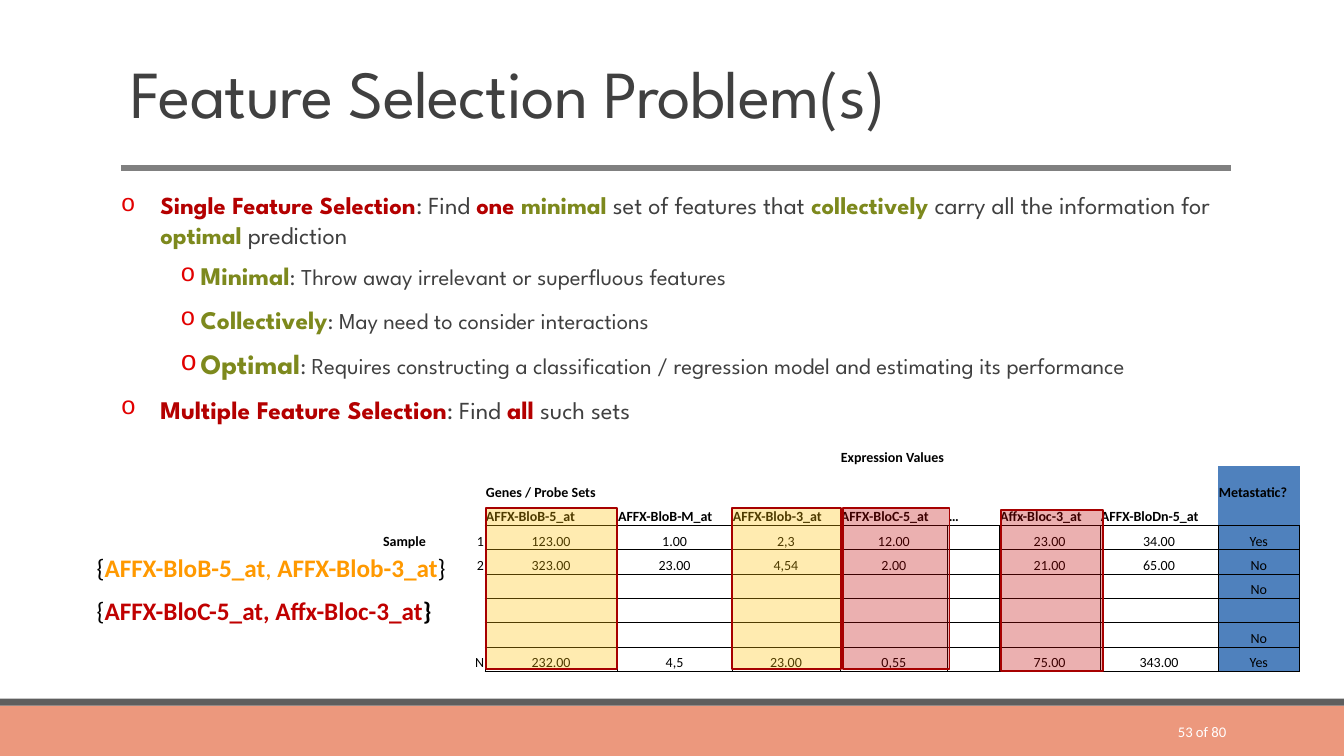
"""Build the feature selection slide with its expression table."""
from lxml import etree
from pptx import Presentation, util as u
from pptx.dml.color import RGBColor
from pptx.enum import shapes, text
from pptx.oxml.ns import qn

deck = Presentation()
deck.slide_width, deck.slide_height = u.Inches(13.33), u.Inches(7.5)
slide = deck.slides.add_slide(deck.slide_layouts[6])
items = slide.shapes
BOX = shapes.MSO_SHAPE.RECTANGLE
ALIGN, ANCHOR = text.PP_ALIGN, text.MSO_ANCHOR
LEFT, MID, RIGHT = ALIGN.LEFT, ALIGN.CENTER, ALIGN.RIGHT
HEAD, BASE = "League Spartan", "Calibri"
RED, GREEN, GREY, BLACK = "B40000", "7D891D", "404040", "000000"
GOLD, WINE, BLUE = "FF9900", "C00000", "4F81BD"


def place(*shares):
    """Turn percent shares of the slide into lengths, across and down in turn."""
    sides = (deck.slide_width, deck.slide_height) * 2
    return [round(side * share / 100) for side, share in zip(sides, shares)]


def paint(fill, code):
    """Fill an area, a line or a font with one colour."""
    fill.solid()
    fill.fore_color.rgb = RGBColor.from_string(code)


for area, code in (((0, 93.33, 100, 6.67), "EC987D"), ((0, 92.4, 100, 0.93), "5E5E5E")):
    band = items.add_shape(BOX, *place(*area))
    band.shadow.inherit = False
    paint(band.fill, code)
    band.line.fill.background()

rule = items.add_connector(shapes.MSO_CONNECTOR.STRAIGHT, *place(9, 22.27, 91.6, 22.27))
paint(rule.line.fill, "808080")
rule.line.width = u.Pt(4.25)
etree.SubElement(rule._element.spPr, qn("a:effectLst"))

lines = []
notes = [
    ((9, 4.13, 82.5, 17.6), ANCHOR.MIDDLE, LEFT, HEAD,
     [("Feature Selection Problem(s)", 48, GREY, False)]),
    ((6.45, 72.4, 28.5, 5.33), ANCHOR.TOP, LEFT, BASE,
     [("{", 18, BLACK, False), ("AFFX-BloB-5_at", 18, GOLD, True), (",", 18, GOLD, False),
      (" AFFX-Blob-3_at", 18, GOLD, True), ("}", 18, BLACK, False)]),
    ((6.45, 78.13, 27.76, 5.33), ANCHOR.TOP, LEFT, BASE,
     [("{", 18, BLACK, False), ("AFFX-BloC-5_at, Affx-Bloc-3_at", 18, WINE, True),
      ("}", 18, BLACK, True)]),
    ((81.25, 94.13, 10.73, 5.33), ANCHOR.MIDDLE, RIGHT, BASE,
     [("53 of 80", 10.5, "FFFFFF", False)]),
]
for area, anchor, align, face, runs in notes:
    frame = items.add_textbox(*place(*area)).text_frame
    frame.word_wrap = True
    frame.vertical_anchor = anchor
    par = frame.paragraphs[0]
    par.alignment = align
    par.line_spacing = 0.85 if face == HEAD else 1.0
    lines.append((par, face, runs))

points = [
    (0, 1.0, 17.5, 17.5, [
        ("Single Feature Selection", RED), (": Find ", GREY), ("one ", RED), ("minimal", GREEN),
        (" set of features that ", GREY), ("collectively", GREEN),
        (" carry all the information for ", GREY), ("optimal", GREEN), (" prediction", GREY)]),
    (1, 0.7, 18.1, 16.2, [
        ("Minimal", GREEN), (": Throw away irrelevant or superfluous features", GREY)]),
    (1, 0.7, 18.1, 16.2, [
        ("Collectively", GREEN), (": May need to consider interactions", GREY)]),
    (1, 0.7, 20, 16.2, [
        ("Optimal", GREEN),
        (": Requires constructing a classification / regression model"
         " and estimating its performance", GREY)]),
    (0, 0.7, 18.1, 17.5, [
        ("Multiple Feature Selection", RED), (": Find ", GREY), ("all", RED),
        (" such sets", GREY)]),
]
body = items.add_textbox(*place(9, 24.53, 82.5, 36.4)).text_frame
body.word_wrap = True
body.margin_left = body.margin_right = 0
for row, (level, space, strong, plain, parts) in enumerate(points):
    par = body.add_paragraph() if row else body.paragraphs[0]
    par.level = level
    props = par._p.get_or_add_pPr()
    props.set("marL", str(u.Inches((0.39, 0.79)[level])))
    props.set("indent", str(u.Inches((-0.39, -0.2)[level])))
    tint = etree.SubElement(props, qn("a:buClr"))
    etree.SubElement(tint, qn("a:srgbClr"), val="E20000")
    etree.SubElement(props, qn("a:buFont"), typeface="Courier New")
    etree.SubElement(props, qn("a:buChar"), char="o")
    par.line_spacing = space
    par.space_before, par.space_after = u.Pt(12), u.Pt((2, 4)[level])
    lines.append((par, HEAD, [(words, plain if code == GREY else strong, code, code != GREY)
                              for words, code in parts]))

for par, face, runs in lines:
    par.font.name = face
    for words, size, code, bold in runs:
        run = par.add_run()
        run.text = words
        run.font.name, run.font.size, run.font.bold = face, u.Pt(size), bold
        paint(run.font.fill, code)
        if size == 48:
            run.font._element.set("spc", "-50")

wide = [3.83, 3.83, 9.83, 8.55, 8.03, 8.03, 3.83, 7.5, 8.78, 6.08]
tall = [3.22, 4.67] + [3.22] * 7
data = [
    ["", "", "Expression Values"],
    ["", "", "Genes / Probe Sets"] + [""] * 6 + ["Metastatic?"],
    ["", "", "AFFX-BloB-5_at", "AFFX-BloB-M_at", "AFFX-Blob-3_at", "AFFX-BloC-5_at", "…",
     "Affx-Bloc-3_at", "AFFX-BloDn-5_at", ""],
    ["Sample", "1", "123.00", "1.00", "2,3", "12.00", "", "23.00", "34.00", "Yes"],
    ["", "2", "323.00", "23.00", "4,54", "2.00", "", "21.00", "65.00", "No"],
    [""] * 9 + ["No"],
    [""] * 10,
    [""] * 9 + ["No"],
    ["", "N", "232.00", "4,5", "23.00", "0,55", "", "75.00", "343.00", "Yes"],
]
grid = items.add_table(len(tall), len(wide), *place(28.43, 58.4, sum(wide), sum(tall))).table
grid.first_row = grid.horz_banding = False
for col, share in zip(grid.columns, wide):
    col.width = place(share)[0]
for row, share in zip(grid.rows, tall):
    row.height = place(0, share)[1]
grid.cell(0, 2).merge(grid.cell(0, 9))
for r, row in enumerate(data):
    for c in range(len(wide)):
        words = row[c] if c < len(row) else ""
        cell = grid.cell(r, c)
        inner = r > 2 and c > 1
        cell.margin_left = cell.margin_right = cell.margin_top = u.Inches(0.01)
        cell.margin_bottom = 0
        cell.vertical_anchor = ANCHOR.BOTTOM
        par = cell.text_frame.paragraphs[0]
        par.alignment = MID if inner or r == 0 else RIGHT if c == 1 else LEFT
        par.font.name, par.font.size = BASE, u.Pt(10)
        par.font.bold = r < 3 or c == 0
        paint(par.font.fill, BLACK)
        if words:
            par.add_run().text = words
        else:
            par._p.get_or_add_endParaRPr().set("sz", "1000")
        drawn = "LRTB" if inner else "B" if r == 2 and c > 1 else "R" if r > 2 and c == 1 else ""
        props = cell._tc.get_or_add_tcPr()
        for side in "LRTB":
            edge = etree.SubElement(props, qn("a:ln" + side), w=str(u.Pt(0.5)))
            if side in drawn:
                solid = etree.SubElement(edge, qn("a:solidFill"))
                etree.SubElement(solid, qn("a:srgbClr"), val=BLACK)
            else:
                etree.SubElement(edge, qn("a:noFill"))
        if c == 9 and r:
            paint(cell.fill, BLUE)
        else:
            cell.fill.background()

marks = [(36.15, 67.2, 9.75, "FFC000"), (54.45, 67.2, 8.1, "FFC000"),
         (62.7, 67.2, 7.95, WINE), (74.5, 67.47, 7.6, WINE)]
for left, top, span, code in marks:
    mark = items.add_shape(BOX, *place(left, top, span, 21.33))
    mark.shadow.inherit = False
    paint(mark.fill, code)
    tint = mark._element.spPr.find(".//" + qn("a:srgbClr"))
    etree.SubElement(tint, qn("a:alpha"), val="31000")
    paint(mark.line.fill, "A70000")
    mark.line.width = u.Pt(1.25)

deck.save("out.pptx")
